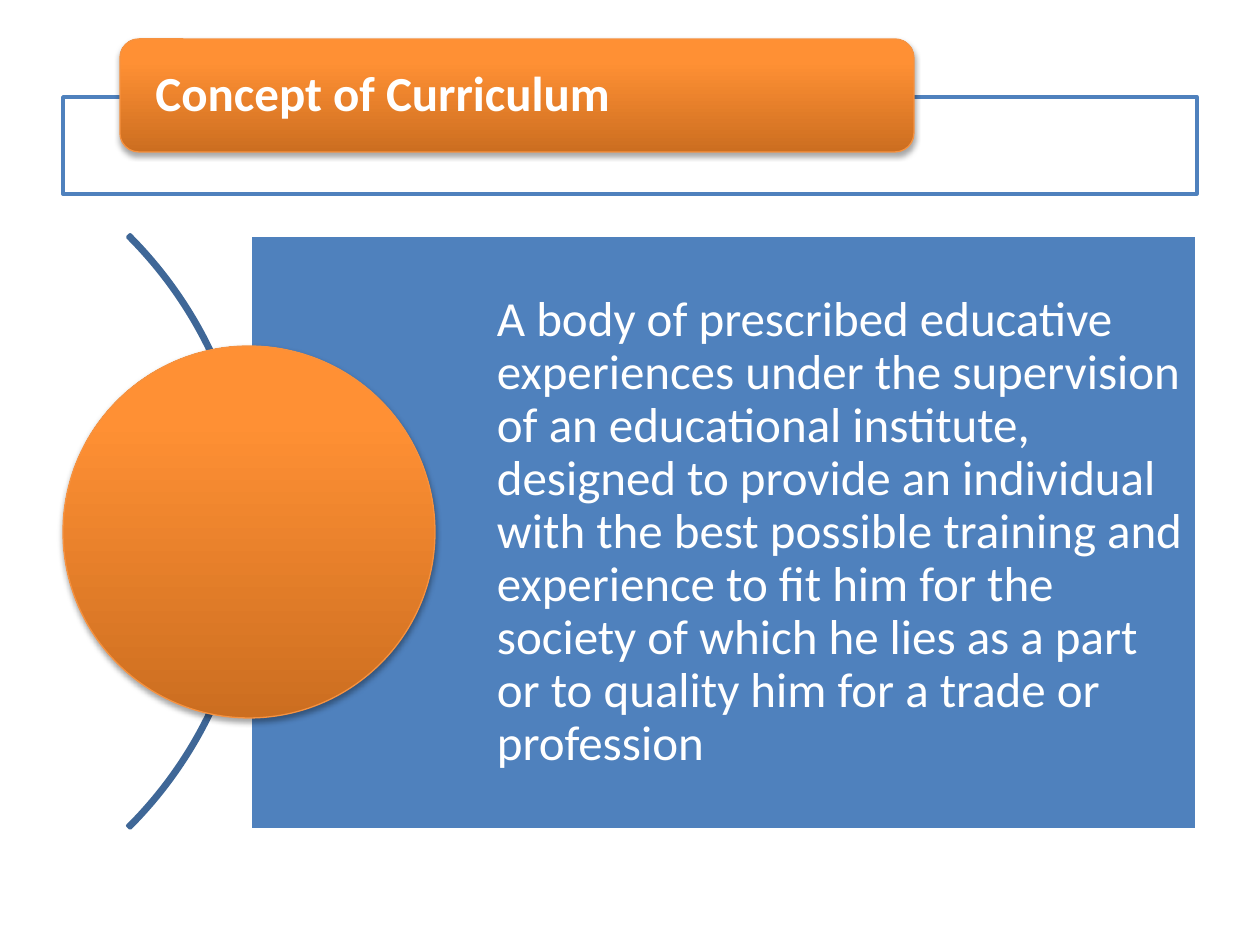
import pptx
import pptx.util
import pptx.oxml
import pptx.oxml.ns
import pptx.dml.color
import pptx.enum.shapes
import pptx.enum.text
from lxml import etree

TITLE = "Concept of Curriculum"
DEFINITION = (
    "A body of prescribed educative experiences under the supervision of an "
    "educational institute, designed to provide an individual with the best "
    "possible training and experience to fit him for the society of which he "
    "lies as a part or to quality him for a trade or profession"
)
FRAME = (63, 97, 1134, 97)
TITLE_TAB = (120, 39, 794, 113)
ARC = (-586, 112, 839, 839)
PANEL = (250, 235, 947, 595)
CIRCLE = (63, 346, 372, 372)
ARC_ADJUSTMENTS = (189, 27, 0.004)
ORANGE_STOPS = ((0, "CC6E20"), (80, "FF9034"), (100, "FF9136"))
WHITE, BLUE, DARK_BLUE, ORANGE = "FFFFFF", "4F81BD", "3F6797", "F69240"
SCALE = 914400 // 126
KINDS = pptx.enum.shapes.MSO_SHAPE
NAMESPACE = pptx.oxml.ns.nsdecls("a")


def px(length):
    return pptx.util.Emu(length * SCALE)


def color(value):
    return pptx.dml.color.RGBColor.from_string(value)


def add_shape(slide, kind, box, line, width, fill=None):
    shape = slide.shapes.add_shape(kind, *map(px, box))
    shape.shadow.inherit = False
    if fill:
        shape.fill.solid()
        shape.fill.fore_color.rgb = color(fill)
    else:
        shape.fill.background()
    shape.line.color.rgb = color(line)
    shape.line.width = pptx.util.Pt(width)
    return shape


def add_orange_shape(slide, kind, box):
    shape = add_shape(slide, kind, box, ORANGE, 0.75)
    stops = "".join(
        f'<a:gs pos="{position * 1000}"><a:srgbClr val="{value}"/></a:gs>'
        for position, value in ORANGE_STOPS
    )
    gradient = pptx.oxml.parse_xml(
        f'<a:gradFill {NAMESPACE} rotWithShape="1"><a:gsLst>{stops}</a:gsLst>'
        '<a:lin ang="16200000" scaled="0"/></a:gradFill>'
    )
    properties = shape._element.spPr
    properties.replace(properties.find(pptx.oxml.ns.qn("a:noFill")), gradient)
    shadow = pptx.oxml.parse_xml(
        f'<a:outerShdw {NAMESPACE} blurRad="40000" dist="23000" dir="5400000" '
        'rotWithShape="0"><a:srgbClr val="000000"><a:alpha val="35000"/>'
        '</a:srgbClr></a:outerShdw>'
    )
    properties.find(pptx.oxml.ns.qn("a:effectLst")).append(shadow)
    return shape


def write(shape, text, margins, bold=False):
    frame = shape.text_frame
    frame.word_wrap = True
    frame.vertical_anchor = pptx.enum.text.MSO_ANCHOR.MIDDLE
    (frame.margin_left, frame.margin_top,
     frame.margin_right, frame.margin_bottom) = map(px, margins)
    paragraph = frame.paragraphs[0]
    paragraph.text = text
    paragraph.alignment = pptx.enum.text.PP_ALIGN.LEFT
    paragraph.line_spacing = 0.9
    paragraph.font.name = "Calibri"
    paragraph.font.size = pptx.util.Pt(28)
    paragraph.font.bold = bold
    paragraph.font.color.rgb = color(WHITE)


def main():
    presentation = pptx.Presentation()
    presentation.slide_width = px(1260)
    presentation.slide_height = px(945)
    slide = presentation.slides.add_slide(presentation.slide_layouts[6])

    frame = add_shape(slide, KINDS.RECTANGLE, FRAME, BLUE, 2, WHITE)
    fill_color = frame._element.spPr.find(".//" + pptx.oxml.ns.qn("a:srgbClr"))
    etree.SubElement(fill_color, pptx.oxml.ns.qn("a:alpha"), val="90000")

    title_tab = add_orange_shape(slide, KINDS.ROUNDED_RECTANGLE, TITLE_TAB)
    write(title_tab, TITLE, (30, 0, 30, 0), bold=True)

    arc = add_shape(slide, KINDS.BLOCK_ARC, ARC, DARK_BLUE, 2)
    for index, value in enumerate(ARC_ADJUSTMENTS):
        arc.adjustments[index] = value

    panel = add_shape(slide, KINDS.RECTANGLE, PANEL, WHITE, 2, BLUE)
    write(panel, DEFINITION, (247, 10, 10, 10))

    add_orange_shape(slide, KINDS.OVAL, CIRCLE)
    presentation.save("out.pptx")


if __name__ == "__main__":
    main()
